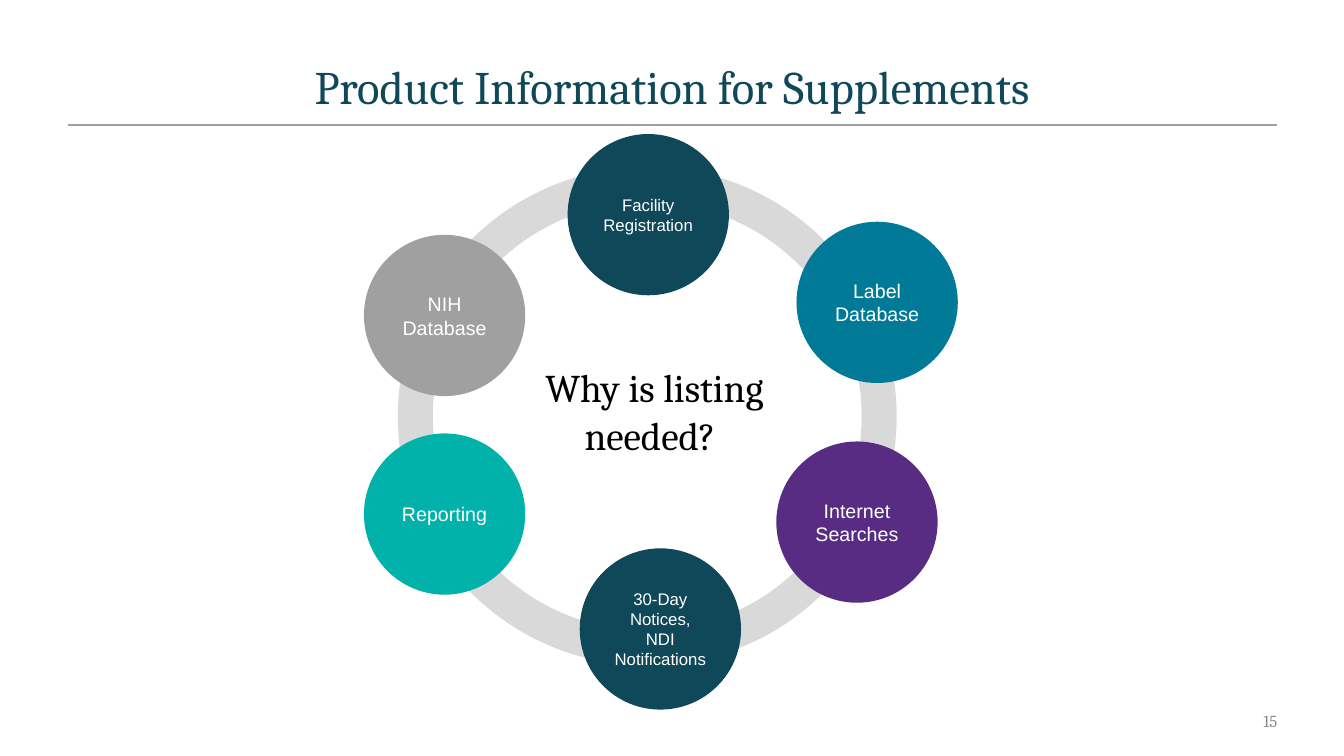
"""Build the slide on product information for supplements."""
from dataclasses import dataclass

from lxml import etree
from pptx import Presentation
from pptx import util as u
from pptx.dml.color import RGBColor
from pptx.enum import shapes, text
from pptx.oxml.ns import qn

COLOURS = {
    "navy": "0F4859", "blue": "007A96", "purple": "582C83", "teal": "00B2A9",
    "grey": "A0A0A0", "ring": "D9D9D9", "number": "8C8C8C",
    "white": "FFFFFF", "black": "000000",
}
DIAMETER = 1.6


@dataclass
class Topic:
    """A coloured circle on the ring."""
    lines: tuple[str, ...]
    left: float
    top: float
    colour: str
    size: float = 14


@dataclass
class Label:
    """A line of text in a box."""
    words: str
    area: tuple[float, float, float, float]
    size: float
    colour: str
    align: text.PP_ALIGN = text.PP_ALIGN.CENTER
    anchor: text.MSO_ANCHOR = text.MSO_ANCHOR.TOP
    right_inset: float = 0.1


TOPICS = [
    Topic(("Facility", "Registration"), 5.63, 1.33, "navy", 12),
    Topic(("Label Database",), 7.9, 2.2, "blue"),
    Topic(("Internet Searches",), 7.7, 4.38, "purple"),
    Topic(("NIH Database",), 3.61, 2.33, "grey"),
    Topic(("Reporting",), 3.61, 4.3, "teal"),
    Topic(("30-Day Notices, NDI Notifications",), 5.75, 5.44, "navy", 12),
]
TITLE = Label("Product Information for Supplements", (0.67, 0.51, 12, 0.67),
              33.3, "navy", anchor=text.MSO_ANCHOR.BOTTOM)
QUESTION = Label("Why is listing needed? ", (5.02, 3.56, 2.94, 1.04), 28, "black")
NUMBER = Label("15", (9.67, 6.95, 3, 0.4), 12, "number",
               text.PP_ALIGN.RIGHT, text.MSO_ANCHOR.MIDDLE, 0)


def colour(name: str) -> RGBColor:
    """Look up a named colour."""
    return RGBColor.from_string(COLOURS[name])


def write(box, lines: tuple[str, ...], font_name: str, size: float, ink: str,
          align: text.PP_ALIGN, anchor: text.MSO_ANCHOR) -> None:
    """Put formatted paragraphs into a box."""
    frame = box.text_frame
    frame.text = "\n".join(lines)
    frame.word_wrap = True
    frame.auto_size = text.MSO_AUTO_SIZE.NONE
    frame.vertical_anchor = anchor
    for para in frame.paragraphs:
        para.alignment = align
        para.font.name = font_name
        para.font.size = u.Pt(size)
        para.font.color.rgb = colour(ink)


def draw_label(box, label: Label) -> None:
    """Place a text box or title and fill in its label."""
    box.left, box.top, box.width, box.height = map(u.Inches, label.area)
    write(box, (label.words,), "Cambria", label.size, label.colour,
          label.align, label.anchor)
    box.text_frame.margin_right = u.Inches(label.right_inset)


def add_circle(page, left: float, top: float, diameter: float):
    """Add a circle without a shadow."""
    circle = page.shapes.add_shape(
        shapes.MSO_SHAPE.OVAL, u.Inches(left), u.Inches(top),
        u.Inches(diameter), u.Inches(diameter))
    circle.shadow.inherit = False
    return circle


def add_topic(page, topic: Topic) -> None:
    """Draw one topic circle."""
    circle = add_circle(page, topic.left, topic.top, DIAMETER)
    circle.fill.solid()
    circle.fill.fore_color.rgb = colour(topic.colour)
    circle.line.fill.background()
    write(circle, topic.lines, "Arial", topic.size, "white",
          text.PP_ALIGN.CENTER, text.MSO_ANCHOR.MIDDLE)


def add_rule(page) -> None:
    """Draw the line under the title."""
    rule = page.shapes.add_connector(
        shapes.MSO_CONNECTOR.STRAIGHT, u.Inches(0.67), u.Inches(1.24),
        u.Inches(12.67), u.Inches(1.24))
    rule.line.color.rgb = colour("grey")
    rule.line.width = u.Pt(1)
    etree.SubElement(rule._element.spPr, qn("a:effectLst"))


def add_ring(page) -> None:
    """Draw the ring that joins the topics."""
    ring = add_circle(page, 4.12, 1.83, 4.6)
    ring.fill.background()
    ring.line.color.rgb = colour("ring")
    ring.line.width = u.Pt(25)


def main() -> None:
    """Build and save the deck."""
    deck = Presentation()
    deck.slide_width, deck.slide_height = u.Inches(13.33), u.Inches(7.5)
    page = deck.slides.add_slide(deck.slide_layouts.get_by_name("Title Only"))
    draw_label(page.shapes.title, TITLE)
    add_rule(page)
    add_ring(page)
    for topic in TOPICS:
        add_topic(page, topic)
    for label in (QUESTION, NUMBER):
        draw_label(page.shapes.add_textbox(*map(u.Inches, label.area)), label)
    deck.save("out.pptx")


if __name__ == "__main__":
    main()
